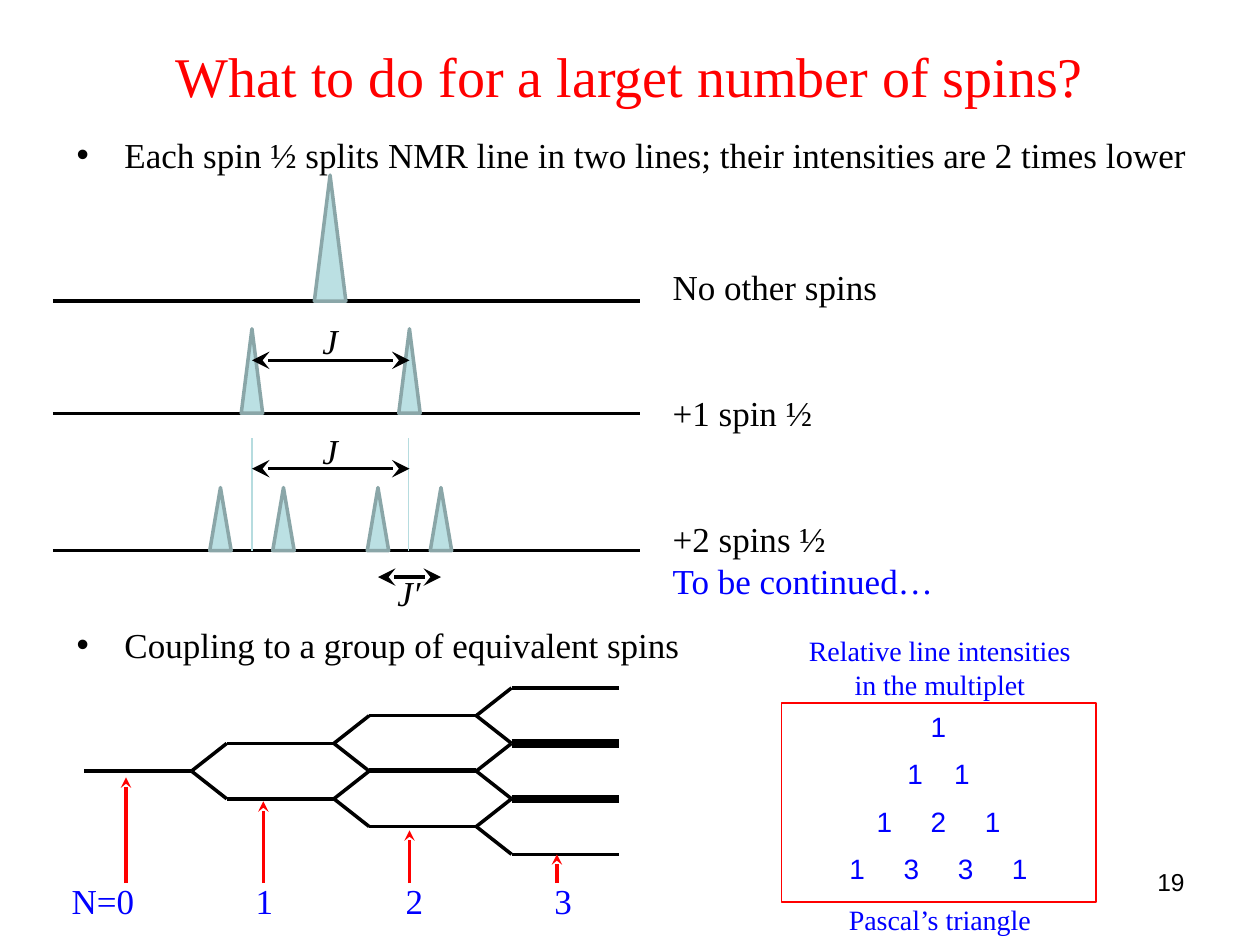
from dataclasses import dataclass
from math import comb

from lxml.etree import SubElement
from pptx import Presentation
from pptx.dml.color import RGBColor
from pptx.enum.shapes import MSO_CONNECTOR as Connector, MSO_SHAPE as Shape
from pptx.enum.text import MSO_ANCHOR as Anchor, PP_ALIGN as Align
from pptx.oxml.ns import qn
from pptx.util import Inches, Pt


@dataclass(frozen=True)
class Theme:
    black: str = "000000"
    red: str = "FF0000"
    blue: str = "0000FF"
    peak: str = "BBE0E3"
    peak_edge: str = "8AA6A8"
    guide: str = "B6DCDF"
    serif: str = "Times New Roman"
    sans: str = "Arial"
    title: int = 32
    body: int = 20
    caption: int = 16
    number: int = 14
    stroke: float = 2
    hairline: float = 0.75


THEME = Theme()
BASE_LEFT, BASE_RIGHT = 0.42, 5.08
SPECTRA = [
    (2.39, 1, 0.25, [2.62]),
    (3.28, 0.67, 0.17, [2, 3.25]),
    (4.37, 0.5, 0.17, [1.75, 2.25, 3, 3.5]),
]
COUPLINGS = [
    ("J", 2, 3.25, 2.86, 2.49, 0.33),
    ("J", 2, 3.25, 3.72, 3.36, 0.33),
    ("J′", 3, 3.5, 4.58, 4.49, 0.39),
]
STRAND_OFFSETS = {1: [0], 2: [0, -0.01], 3: [0, -0.02, 0.02]}
TREE_LEFT, TREE_MIDDLE, TREE_DEPTH = 0.67, 6.12, 3
TREE_STEP, BRANCH, SPLIT = 1.13, 0.85, 0.44


def box_lengths(*lengths):
    return [Inches(length) for length in lengths]


def set_values(target, values):
    for name, value in values.items():
        setattr(target, name, value)


def write_paragraph(frame, text, size, color, font=THEME.serif, first=False,
                    italic=False, **paragraph_values):
    paragraph = frame.paragraphs[0] if first else frame.add_paragraph()
    set_values(paragraph, paragraph_values)
    run = paragraph.add_run()
    run.text = text
    set_values(run.font, {"name": font, "size": Pt(size), "italic": italic})
    run.font.color.rgb = RGBColor.from_string(color)
    return paragraph


def add_text(slide, box, lines, wrap=True):
    frame = slide.shapes.add_textbox(*box_lengths(*box)).text_frame
    frame.word_wrap = wrap
    for index, line in enumerate(lines):
        write_paragraph(frame, first=index == 0, **line)
    return frame


def add_bullet(paragraph):
    properties = paragraph._p.get_or_add_pPr()
    properties.set("marL", str(Inches(0.38)))
    properties.set("indent", str(-Inches(0.38)))
    SubElement(properties, qn("a:buFont"), typeface=THEME.sans)
    SubElement(properties, qn("a:buChar"), char="•")


def add_center_tabs(paragraph, positions):
    tabs = SubElement(paragraph._p.get_or_add_pPr(), qn("a:tabLst"))
    for position in positions:
        SubElement(tabs, qn("a:tab"), pos=str(Inches(position)), algn="ctr")


def add_line(shapes, start, end, color=THEME.black, width=THEME.stroke,
             heads=(), head_size="med"):
    connector = shapes.add_connector(Connector.STRAIGHT, *box_lengths(*start, *end))
    connector.line.color.rgb = RGBColor.from_string(color)
    connector.line.width = Pt(width)
    outline = connector.line._get_or_add_ln()
    for head in heads:
        SubElement(outline, qn(f"a:{head}"), type="stealth", w=head_size, len=head_size)
    SubElement(connector._element.spPr, qn("a:effectLst"))


def add_peak(slide, center, base, width, height):
    peak = slide.shapes.add_shape(
        Shape.ISOSCELES_TRIANGLE,
        *box_lengths(center - width / 2, base - height, width, height))
    peak.shadow.inherit = False
    peak.fill.solid()
    peak.fill.fore_color.rgb = RGBColor.from_string(THEME.peak)
    peak.line.color.rgb = RGBColor.from_string(THEME.peak_edge)
    peak.line.width = Pt(THEME.stroke)


def add_title(slide):
    title = slide.shapes.title
    left, top, width, height = box_lengths(0.5, -0.03, 9, 1.25)
    set_values(title, {"left": left, "top": top, "width": width, "height": height})
    title.text_frame.vertical_anchor = Anchor.MIDDLE
    write_paragraph(title.text_frame, "What to do for a larget number of spins?",
                    THEME.title, THEME.red, first=True, alignment=Align.CENTER)


def add_bullets(slide):
    style = {"size": THEME.body, "color": THEME.black}
    frame = add_text(slide, (0.51, 1.01, 9.23, 6.04), [
        {"text": "Each spin ½ splits NMR line in two lines; "
                 "their intensities are 2 times lower", **style},
        {"text": "Coupling to a group of equivalent spins",
         "space_before": Pt(256), **style},
    ])
    for paragraph in frame.paragraphs:
        add_bullet(paragraph)


def add_spectra(slide):
    for base, height, width, centers in SPECTRA:
        add_line(slide.shapes, (BASE_LEFT, base), (BASE_RIGHT, base))
        for center in centers:
            add_peak(slide, center, base, width, height)
    for x in (2, 3.24):
        add_line(slide.shapes, (x, 3.48), (x, 4.37), THEME.guide, THEME.hairline)
    for label, left, right, y, top, width in COUPLINGS:
        add_line(slide.shapes, (left, y), (right, y),
                 heads=("headEnd", "tailEnd"), head_size="lg")
        add_text(slide, ((left + right - width) / 2, top, width, 0.44),
                 [{"text": label, "size": THEME.body, "color": THEME.black,
                   "italic": True}], wrap=False)
    style = {"size": THEME.body, "color": THEME.black}
    add_text(slide, (5.24, 2.06, 4.17, 2.79), [
        {"text": "No other spins", **style},
        {"text": "+1 spin ½", "space_before": Pt(48), **style},
        {"text": "+2 spins ½", "space_before": Pt(48), **style},
        {"text": "To be continued…", "size": THEME.body, "color": THEME.blue},
    ])


def add_splitting_tree(slide):
    tree = slide.shapes.add_group_shape().shapes
    for level in range(TREE_DEPTH + 1):
        left = TREE_LEFT + level * TREE_STEP
        right = left + BRANCH
        for index in range(level + 1):
            y = TREE_MIDDLE + (index - level / 2) * SPLIT
            for offset in STRAND_OFFSETS[comb(level, index)]:
                add_line(tree, (left, y + offset), (right, y + offset))
            if level < TREE_DEPTH:
                for shift in (-SPLIT / 2, SPLIT / 2):
                    add_line(tree, (right, y), (left + TREE_STEP, y + shift))
    for x, tip in [(1, 6.17), (2.09, 6.36), (3.25, 6.59), (4.42, 6.78)]:
        add_line(tree, (x, 7.01), (x, tip), THEME.red, heads=("tailEnd",))
    frame = add_text(slide, (0.47, 6.93, 4.21, 0.44), [
        {"text": "N=0\t1\t2\t3", "size": THEME.body, "color": THEME.blue}])
    add_center_tabs(frame.paragraphs[0], [1.53, 2.72, 3.9])


def add_pascal_triangle(slide):
    box = slide.shapes.add_shape(Shape.RECTANGLE, *box_lengths(6.2, 5.58, 2.5, 1.58))
    box.shadow.inherit = False
    box.fill.background()
    box.line.color.rgb = RGBColor.from_string(THEME.red)
    box.line.width = Pt(THEME.hairline)
    frame = box.text_frame
    frame.vertical_anchor = Anchor.TOP
    for row, step in enumerate([0, 0.37, 0.43, 0.43]):
        text = "".join(f"\t{comb(row, index)}" for index in range(row + 1))
        paragraph = write_paragraph(
            frame, text, THEME.caption, THEME.blue, THEME.sans, first=row == 0,
            alignment=Align.LEFT, space_before=Pt(8 if row else 0))
        add_center_tabs(paragraph, [1.15 + (index - row / 2) * step
                                    for index in range(row + 1)])
    style = {"size": THEME.caption, "color": THEME.blue, "alignment": Align.CENTER}
    add_text(slide, (6.28, 4.98, 2.36, 2.52), [
        {"text": "Relative line intensities in the multiplet", **style},
        {"text": "Pascal’s triangle", "space_before": Pt(115), **style},
    ])


def main():
    presentation = Presentation()
    presentation.slide_width, presentation.slide_height = box_lengths(10, 7.5)
    slide = presentation.slides.add_slide(presentation.slide_layouts[5])
    add_title(slide)
    add_bullets(slide)
    add_spectra(slide)
    add_splitting_tree(slide)
    add_pascal_triangle(slide)
    add_text(slide, (7.17, 6.83, 2.33, 0.52), [
        {"text": "19", "size": THEME.number, "color": THEME.black,
         "font": THEME.sans, "alignment": Align.RIGHT}])
    presentation.save("out.pptx")


if __name__ == "__main__":
    main()
